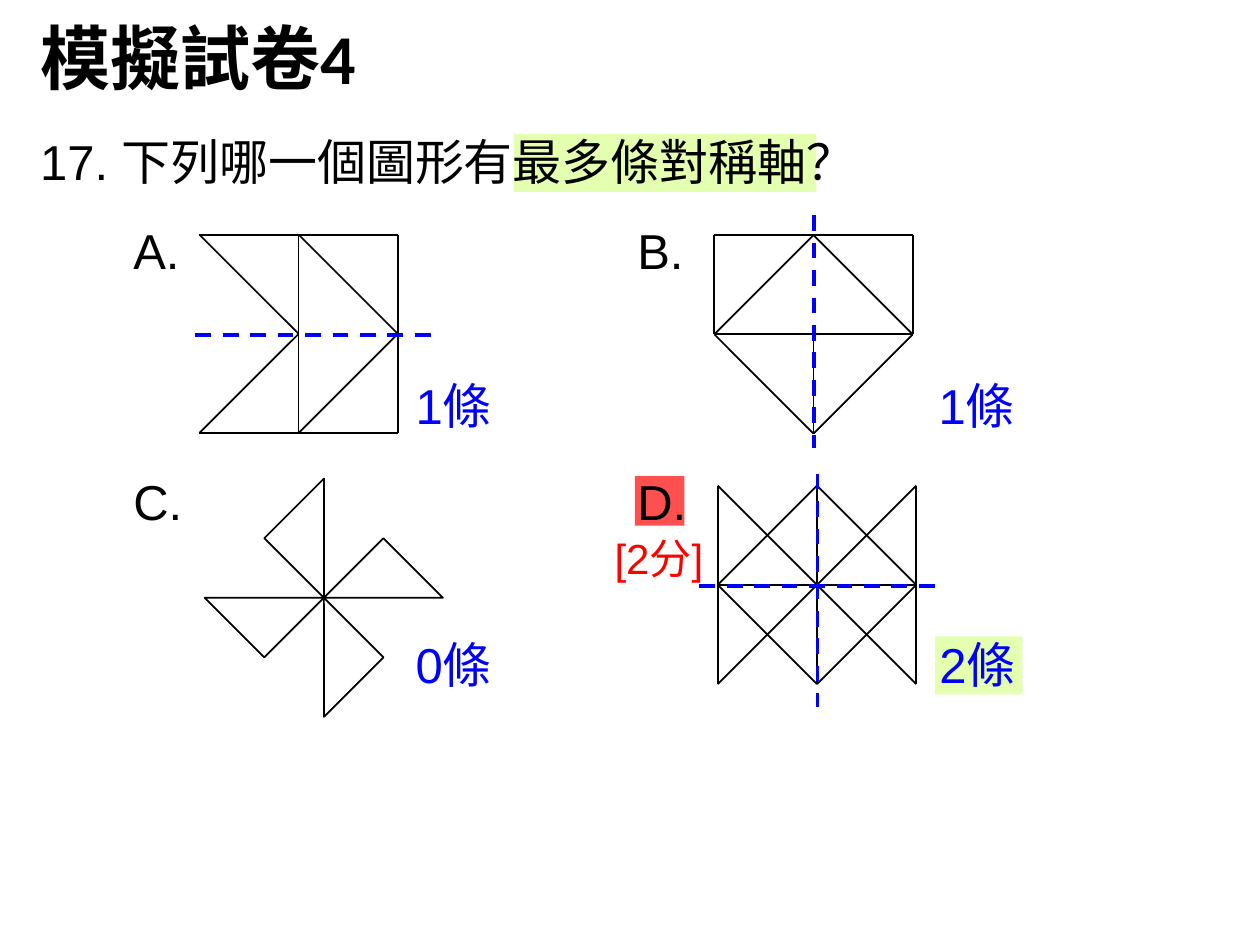
from pptx import Presentation
from pptx.dml.color import RGBColor
from pptx.enum.dml import MSO_LINE
from pptx.enum.shapes import MSO_CONNECTOR, MSO_SHAPE
from pptx.enum.text import MSO_ANCHOR, MSO_AUTO_SIZE, PP_ALIGN
from pptx.oxml.ns import qn
from pptx.util import Cm, Pt
from lxml.etree import SubElement

BLACK = RGBColor(0x00, 0x00, 0x00)
BLUE = RGBColor(0x00, 0x00, 0xFF)
RED = RGBColor(0xFF, 0x00, 0x00)
LIME = RGBColor(0xE4, 0xFF, 0xAF)
CORAL = RGBColor(0xFF, 0x50, 0x50)

CELL = 2  # side of one grid square in the figures, in cm


class QuizSlide:
    latin = "Arial"
    chinese = "Noto Sans CJK TC"
    size = 28

    def __init__(self, prs):
        self.slide = prs.slides.add_slide(prs.slide_layouts[5])
        self.shapes = self.slide.shapes

    def style_run(self, run, **values):
        style = {"name": self.latin, "size": Pt(self.size), **values}
        color = style.pop("color", BLACK)
        for key, value in style.items():
            setattr(run.font, key, value)
        run.font.color.rgb = color
        SubElement(run.font._element, qn("a:ea"), typeface=self.chinese)

    def title(self, parts, left, top, width, height):
        heading = self.shapes.title
        box = {"left": left, "top": top, "width": width, "height": height}
        for key, value in box.items():
            setattr(heading, key, Cm(value))
        heading.text_frame.vertical_anchor = MSO_ANCHOR.MIDDLE
        paragraph = heading.text_frame.paragraphs[0]
        paragraph.alignment = PP_ALIGN.LEFT
        for text, font in parts:
            run = paragraph.add_run()
            run.text = text
            self.style_run(run, name=font, size=Pt(40), bold=True)

    def text(self, words, left, top, width, height=1.45, tab=None,
             anchor=MSO_ANCHOR.MIDDLE, after=6, **font):
        box = self.shapes.add_textbox(Cm(left), Cm(top), Cm(width), Cm(height))
        frame = {"word_wrap": True, "vertical_anchor": anchor,
                 "auto_size": MSO_AUTO_SIZE.SHAPE_TO_FIT_TEXT}
        for key, value in frame.items():
            setattr(box.text_frame, key, value)
        paragraph = box.text_frame.paragraphs[0]
        paragraph.space_after = Pt(after)
        if tab:
            stops = SubElement(paragraph._p.get_or_add_pPr(), qn("a:tabLst"))
            SubElement(stops, qn("a:tab"), pos=str(Cm(tab)), algn="l")
        run = paragraph.add_run()
        run.text = words
        self.style_run(run, **font)

    def highlight(self, left, top, width, height, color):
        mark = self.shapes.add_shape(
            MSO_SHAPE.RECTANGLE, Cm(left), Cm(top), Cm(width), Cm(height))
        mark.shadow.inherit = False
        mark.fill.solid()
        mark.fill.fore_color.rgb = color
        mark.line.fill.background()

    def line(self, start, end, color=BLACK, width=1, dash=None, parent=None):
        ends = [Cm(value) for value in (*start, *end)]
        stroke = (parent or self).shapes.add_connector(
            MSO_CONNECTOR.STRAIGHT, *ends)
        SubElement(stroke._element.spPr, qn("a:effectLst"))
        stroke.line.color.rgb = color
        stroke.line.width = Pt(width)
        if dash:
            stroke.line.dash_style = dash

    def axis(self, start, end):
        self.line(start, end, BLUE, 2.25, MSO_LINE.DASH)

    def figure(self, left, top, segments):
        """Draw segments whose ends are counted in grid squares."""
        group = self.shapes.add_group_shape()
        for x1, y1, x2, y2 in segments:
            self.line((left + x1 * CELL, top + y1 * CELL),
                      (left + x2 * CELL, top + y2 * CELL), parent=group)

    def pinwheel(self, center_x, center_y, leg, reach, blades):
        group = self.shapes.add_group_shape()
        for dx, dy, rotation, flips in blades:
            blade = group.shapes.add_shape(
                MSO_SHAPE.RIGHT_TRIANGLE,
                Cm(center_x + dx * reach - leg / 2),
                Cm(center_y + dy * reach - leg / 2), Cm(leg), Cm(leg))
            blade.shadow.inherit = False
            blade.rotation = rotation
            for flip in flips:
                blade._element.spPr.xfrm.set(flip, "1")
            blade.fill.background()
            blade.line.color.rgb = BLACK
            blade.line.width = Pt(1)


def main():
    prs = Presentation()
    prs.slide_width, prs.slide_height = Cm(25.4), Cm(19.05)
    quiz = QuizSlide(prs)
    quiz.title([("模擬試卷", quiz.chinese), ("4", "Calibri")],
               0.56, 0.1, 8, 2.08)

    # Highlights behind the key words, the answer and its count
    quiz.highlight(18.85, 12.83, 1.76, 1.17, LIME)
    quiz.highlight(10.36, 2.7, 6.1, 1.17, LIME)
    quiz.highlight(12.8, 9.6, 1, 1, CORAL)

    # Question and option letters
    quiz.text("17.", 0.56, 2.52, 2.84, after=0)
    quiz.text("下列哪一個圖形有最多條對稱軸？", 2.2, 2.52, 18.64,
              anchor=MSO_ANCHOR.TOP)
    for letters, top in (("A.\tB.", 4.32), ("C.\tD.", 9.37)):
        quiz.text(letters, 2.44, top, 13.16, tab=10.16)

    # Figure A
    quiz.figure(4.02, 4.73, [
        (0, 0, 2, 0), (0, 2, 2, 2), (2, 0, 2, 2), (1, 0, 1, 2),
        (0, 0, 1, 1), (1, 0, 2, 1), (2, 1, 1, 2), (1, 1, 0, 2)])

    # Figure B
    diamond = [(1, 0, 0, 1), (2, 1, 1, 2), (2, 1, 1, 0), (1, 2, 0, 1)]
    quiz.figure(14.4, 4.74, [
        (0, 0, 2, 0), (0, 1, 2, 1), (0, 0, 0, 1), (2, 0, 2, 1),
        (1, 1, 1, 2), *diamond])

    # Figure C
    quiz.pinwheel(6.53, 12.05, 1.7, 1.2, [
        (0, -1, 45, []), (0, 1, 315, ["flipH"]),
        (-1, 0, 45, ["flipH"]), (1, 0, 315, ["flipH", "flipV"])])

    # Figure D
    quiz.figure(14.47, 9.79, [
        (0, 1, 2, 1), (0, 2, 0, 0), (2, 2, 2, 0), (1, 2, 1, 0),
        (2, 2, 0, 0), (2, 0, 0, 2), *diamond])

    # Score
    quiz.text("[2分]", 12.14, 10.62, 2.59, 1.27, anchor=MSO_ANCHOR.TOP,
              after=0, size=Pt(24), color=RED)

    # Axes of symmetry
    quiz.axis((3.94, 6.76), (8.74, 6.76))
    quiz.axis((16.41, 4.34), (16.41, 9.04))
    quiz.axis((14.1, 11.81), (18.9, 11.81))
    quiz.axis((16.48, 9.55), (16.48, 14.25))

    # Number of axes
    for count, left, top in (("2條", 18.69, 12.65), ("0條", 8.13, 12.65),
                             ("1條", 8.13, 7.44), ("1條", 18.67, 7.44)):
        quiz.text(count, left, top, 2.49, color=BLUE)

    prs.save("out.pptx")


if __name__ == "__main__":
    main()
